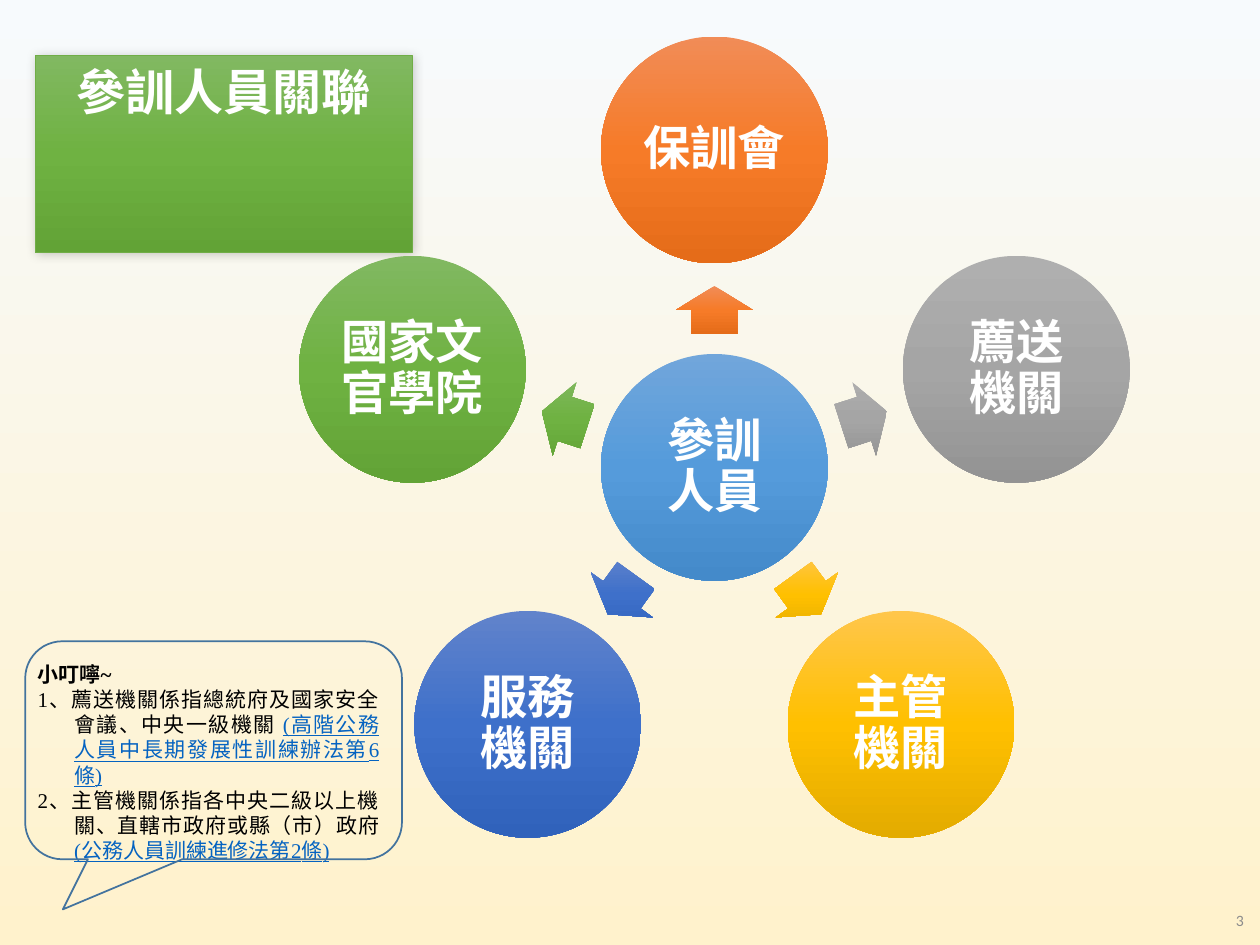
from math import cos, radians, sin

from lxml import etree
from pptx import Presentation
from pptx.dml.color import RGBColor
from pptx.enum.shapes import MSO_SHAPE
from pptx.enum.text import MSO_ANCHOR, MSO_AUTO_SIZE, PP_ALIGN
from pptx.oxml.ns import qn
from pptx.util import Inches, Pt

OVAL = MSO_SHAPE.OVAL
ARROW = MSO_SHAPE.RIGHT_ARROW
CALLOUT = MSO_SHAPE.ROUNDED_RECTANGULAR_CALLOUT
TOP, MIDDLE = MSO_ANCHOR.TOP, MSO_ANCHOR.MIDDLE
GROW = MSO_AUTO_SIZE.SHAPE_TO_FIT_TEXT
LEFT, CENTER, RIGHT, JUSTIFY = PP_ALIGN.LEFT, PP_ALIGN.CENTER, PP_ALIGN.RIGHT, PP_ALIGN.JUSTIFY

HEADING_FONT = "Noto Sans CJK SC"
NOTE_FONT = "Times New Roman"
BACKGROUND = ("F7FAFD", "FFF2CC")
BLUE = ("71A6DB", "559BDB", "448ACA")
GREEN = ("81B861", "6FB242", "62A336")

TITLE = "參訓人員關聯"
HUB = "參訓\v人員"
PARTNERS = [
    ("保訓會", ("F18C57", "F67B28", "E56C19")),
    ("薦送\v機關", ("AFAFAF", "A5A5A5", "939393")),
    ("主管\v機關", ("FFC64B", "FFC000", "E3AB00")),
    ("服務\v機關", ("6183CB", "3E70CA", "3062BB")),
    ("國家文官學院", GREEN),
]
NOTE_HEADING = "小叮嚀~"
NOTES = [
    ("1、薦送機關係指總統府及國家安全會議、中央一級機關 ", "(高階公務人員中長期發展性訓練辦法第6條)"),
    ("2、主管機關係指各中央二級以上機關、直轄市政府或縣（市）政府 ", "(公務人員訓練進修法第2條)"),
]
PAGE_NUMBER = "3"

HUB_X, HUB_Y = 5.67, 3.71
CIRCLE_SIZE = 1.8
CIRCLE_ORBIT, ARROW_ORBIT = 2.52, 1.25
ARROW_WIDTH, ARROW_HEIGHT = 0.38, 0.61


def color(value):
    return RGBColor.from_string(value)


def set_gradient(fill, element, stops):
    fill.gradient()
    fill.gradient_angle = 270
    gradient = element.find(".//" + qn("a:gradFill"))
    gradient.set("rotWithShape", "0")
    stop_list = gradient.find(qn("a:gsLst"))
    for old_stop in list(stop_list):
        stop_list.remove(old_stop)
    for index, value in enumerate(stops):
        position = str(100000 * index // (len(stops) - 1))
        stop = etree.SubElement(stop_list, qn("a:gs"), pos=position)
        etree.SubElement(stop, qn("a:srgbClr"), val=value)


def set_font(paragraph, name, size, value, bold=False, alignment=LEFT):
    paragraph.alignment = alignment
    font = paragraph.font
    font.size, font.bold = Pt(size), bold
    font.color.rgb = color(value)
    font.name = name
    defaults = paragraph._p.pPr.find(qn("a:defRPr"))
    etree.SubElement(defaults, qn("a:ea"), typeface=HEADING_FONT)


def place(shape, left, top, width, height):
    shape.left, shape.top = Inches(left), Inches(top)
    shape.width, shape.height = Inches(width), Inches(height)


def add_centered(slide, kind, x, y, width, height, stops):
    shape = slide.shapes.add_shape(
        kind, Inches(x - width / 2), Inches(y - height / 2), Inches(width), Inches(height))
    shape.shadow.inherit = False
    shape.line.fill.background()
    set_gradient(shape.fill, shape._element, stops)
    return shape


def add_circle(slide, x, y, text, stops):
    circle = add_centered(slide, OVAL, x, y, CIRCLE_SIZE, CIRCLE_SIZE, stops)
    frame = circle.text_frame
    frame.word_wrap, frame.vertical_anchor = True, MIDDLE
    frame.margin_left = frame.margin_right = Inches(0.04)
    frame.margin_top = frame.margin_bottom = Inches(0.04)
    paragraph = frame.paragraphs[0]
    paragraph.text = text
    paragraph.line_spacing = 0.9
    set_font(paragraph, HEADING_FONT, 27, "FFFFFF", True, CENTER)


def add_text_box(slide, *box):
    shape = slide.shapes.add_textbox(*(Inches(value) for value in box))
    shape.text_frame.word_wrap = True
    return shape.text_frame


def add_title(slide):
    title = slide.shapes.title
    place(title, 0.28, 0.44, 2.99, 0.57)
    set_gradient(title.fill, title._element, GREEN)
    title.line.color.rgb = color("70AD47")
    title.line.width = Pt(0.5)
    effects = etree.SubElement(title._element.spPr, qn("a:effectLst"))
    shadow = etree.SubElement(effects, qn("a:outerShdw"), blurRad=str(Pt(6)),
                              dist=str(Pt(1)), dir="2700000", rotWithShape="0")
    shade = etree.SubElement(shadow, qn("a:srgbClr"), val="000000")
    etree.SubElement(shade, qn("a:alpha"), val="20000")
    title.text_frame.text = TITLE
    title.text_frame.vertical_anchor = TOP
    title.text_frame.auto_size = GROW
    set_font(title.text_frame.paragraphs[0], HEADING_FONT, 28, "FFFFFF", True, CENTER)


def add_wheel(slide):
    add_circle(slide, HUB_X, HUB_Y, HUB, BLUE)
    for index, (text, stops) in enumerate(PARTNERS):
        angle = 360 * index / len(PARTNERS) - 90
        across, down = cos(radians(angle)), sin(radians(angle))
        arrow = add_centered(slide, ARROW, HUB_X + ARROW_ORBIT * across,
                             HUB_Y + ARROW_ORBIT * down, ARROW_WIDTH, ARROW_HEIGHT, stops)
        arrow.adjustments[0], arrow.adjustments[1] = 0.6, 0.5
        arrow.rotation = angle % 360
        add_circle(slide, HUB_X + CIRCLE_ORBIT * across, HUB_Y + CIRCLE_ORBIT * down, text, stops)


def add_notes(slide):
    frame = add_text_box(slide, 0.2, 5.2, 2.91, 1.51)
    frame.auto_size = GROW
    heading = frame.paragraphs[0]
    heading.text = NOTE_HEADING
    set_font(heading, NOTE_FONT, 12, "000000", True)
    for statement, law in NOTES:
        paragraph = frame.add_paragraph()
        properties = paragraph._p.get_or_add_pPr()
        properties.set("marL", str(Inches(0.29)))
        properties.set("indent", str(-Inches(0.29)))
        set_font(paragraph, NOTE_FONT, 12, "000000", alignment=JUSTIFY)
        paragraph.add_run().text = statement
        reference = paragraph.add_run()
        reference.text = law
        reference.font.color.rgb = color("0563C1")
        reference.font.underline = True

    callout = slide.shapes.add_shape(
        CALLOUT, Inches(0.2), Inches(5.09), Inches(2.99), Inches(1.73))
    for index, value in enumerate((-0.4, 0.73, 0.17)):
        callout.adjustments[index] = value
    callout.shadow.inherit = False
    callout.fill.background()
    callout.line.color.rgb = color("43739E")
    callout.line.width = Pt(1)


def main():
    presentation = Presentation()
    presentation.slide_width, presentation.slide_height = Inches(10), Inches(7.5)
    slide = presentation.slides.add_slide(presentation.slide_layouts[5])
    set_gradient(slide.background.fill, slide._element, BACKGROUND)
    add_title(slide)
    add_wheel(slide)
    add_notes(slide)
    number = add_text_box(slide, 7.72, 7.1, 2.25, 0.4)
    number.vertical_anchor = MIDDLE
    number.text = PAGE_NUMBER
    set_font(number.paragraphs[0], "Calibri", 9, "8C8C8C", alignment=RIGHT)
    presentation.save("out.pptx")


if __name__ == "__main__":
    main()
